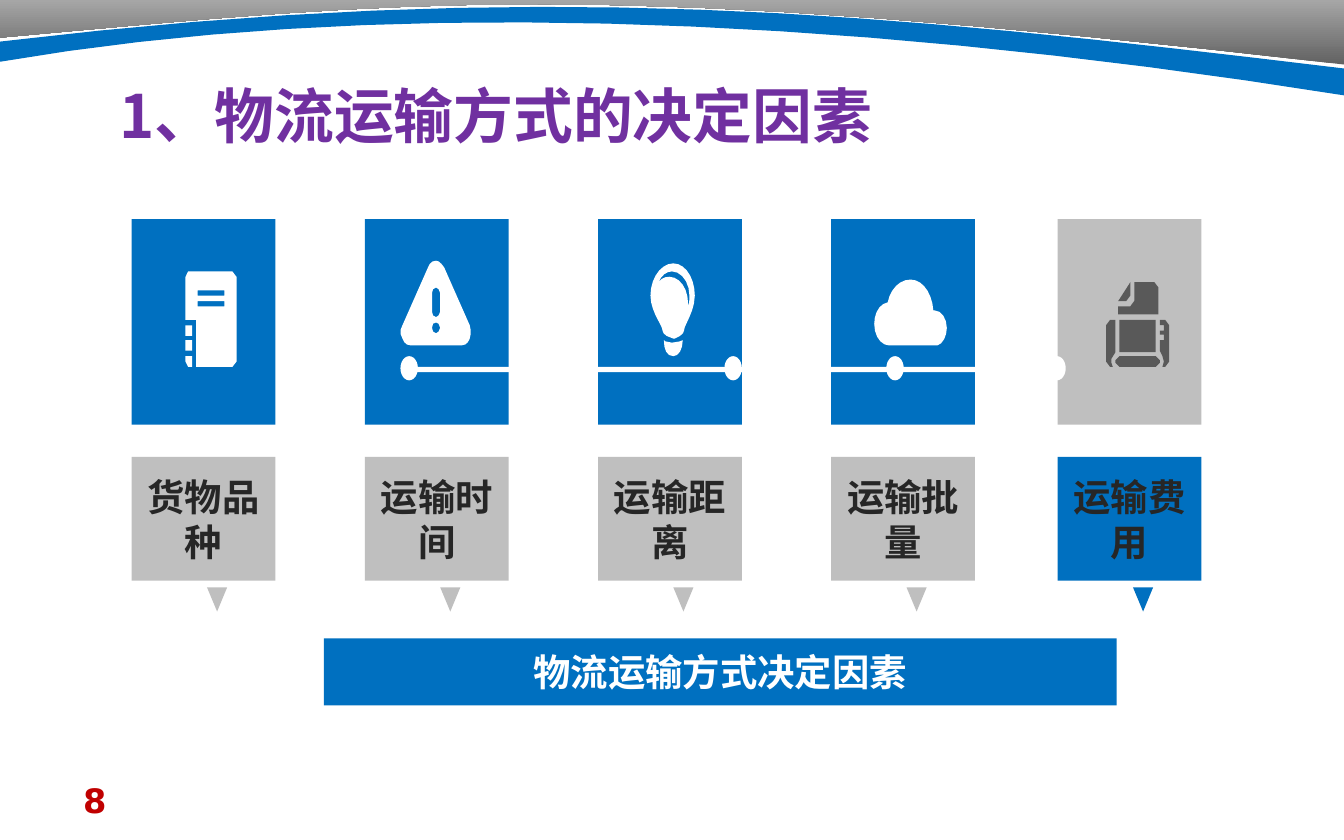
import dataclasses
import math
import lxml.etree
import pptx
import pptx.dml.color
import pptx.enum.shapes
import pptx.enum.text
import pptx.oxml.ns
import pptx.util


@dataclasses.dataclass(frozen=True)
class Theme:
    blue: str = "0070C0"
    gray: str = "BFBFBF"
    dark: str = "595959"
    ink: str = "262626"
    white: str = "FFFFFF"
    plum: str = "7030A0"
    red: str = "C00000"
    low: str = "626262"
    high: str = "A6A6A6"
    han: str = "Noto Sans CJK SC"
    sans: str = "DejaVu Sans"
    head: int = 32
    body: int = 20
    foot: int = 18


T = Theme()
Kind = pptx.enum.shapes.MSO_SHAPE
Align = pptx.enum.text.PP_ALIGN
Inch = pptx.util.Inches

TITLE = "1、物流运输方式的决定因素"
BANNER = "物流运输方式决定因素"
PAGE = "8"

SKY = "M 1000 48 C 443 -17 308 0 0 28 L 0 0 L 1000 0"
BAND = "M 0 31 C 403 -17 652 9 1000 51 L 1000 71 C 605 8 267 0 0 46"

BOOK = [
    "M 42 39 L 75 39 L 78 43 L 78 106 L 75 110 L 48 110 L 48 75 L 40 75 L 40 43 "
    "M 49 65 L 69 65 L 69 61 L 49 61 M 49 57 L 69 57 L 69 53 L 49 53",
    "M 45 110 L 42 110 L 40 106 L 40 102 L 45 102",
    (40, 79, 5, 8),
    (40, 90, 5, 8),
]
ALERT = [
    "M 47 36 C 48 33 50 31 53 31 C 55 31 57 33 59 36 L 78 79 C 79 82 79 86 78 89 "
    "C 77 92 75 94 72 94 L 34 94 C 31 94 29 92 28 89 C 26 86 26 82 28 79 "
    "M 53 85 C 54 85 56 83 56 81 C 56 78 54 77 53 77 C 51 77 50 78 50 81 C 50 83 51 85 53 85 "
    "M 50 69 C 50 71 51 73 53 73 C 54 73 56 71 56 69 L 56 55 C 56 53 54 51 53 51 "
    "C 51 51 50 53 50 55",
]
BULB = [
    "M 50 91 L 55 92 L 61 91 L 63 90 C 63 97 60 102 56 102 C 51 102 49 97 49 90",
    "M 56 33 C 65 33 72 44 72 57 C 72 69 64 79 64 83 C 64 84 63 86 61 87 "
    "L 57 89 L 56 89 L 51 87 C 49 86 48 84 48 83 "
    "C 48 79 39 69 39 57 C 39 44 47 33 56 33 "
    "M 53 43 C 61 43 67 52 67 63 L 67 65 C 68 63 68 60 68 57 C 68 47 62 39 55 39 "
    "C 51 39 47 42 45 47 C 47 44 50 43 53 43",
]
CLOUD = [
    "M 42 62 C 44 52 51 45 59 45 C 68 45 75 55 76 68 L 77 68 C 82 68 86 74 86 81 "
    "C 86 87 83 93 79 94 L 43 94 C 37 94 32 87 32 78 C 32 70 36 63 42 62",
]
PRINT = [
    "M 39 75 L 43 75 L 43 99 L 40 104 L 40 107 L 41 110 L 39 110 L 36 106 L 36 79",
    "M 43 105 L 46 102 L 73 102 L 76 105 L 76 107 L 73 110 L 46 110 L 43 107",
    "M 76 98 L 76 90 L 79 90 L 79 86 L 76 86 L 76 83 L 79 83 L 79 79 L 76 79 L 76 75 "
    "L 80 75 L 83 79 L 83 106 L 80 110 L 78 110 L 79 106 L 78 102",
    "M 51 61 L 45 61 L 54 47 L 54 57",
    "M 45 65 L 54 65 L 57 61 L 57 47 L 72 47 L 75 51 L 75 71 L 45 71",
    (46, 75, 27, 24),
]
CARDS = [
    ("货物品种", BOOK, T.blue, T.gray, T.white),
    ("运输时间", ALERT, T.blue, T.gray, T.white),
    ("运输距离", BULB, T.blue, T.gray, T.white),
    ("运输批量", CLOUD, T.blue, T.gray, T.white),
    ("运输费用", PRINT, T.gray, T.blue, T.dark),
]
LEFT, STEP, WIDE, TUCK = 0.98, 1.735, 1.07, 0.05
TOP, TALL = 1.63, 1.53
NAME_TOP, NAME_TALL = 3.4, 0.92
TIP_TOP, TIP_LEFT = 4.37, 0.56
DOT_LEFT, DOT_STEP, DOT_TOP = 2.98, 1.205, 2.65
UNIT = 9144


def tint(name):
    return pptx.dml.color.RGBColor.from_string(name)


def paint(shape, hue):
    shape.shadow.inherit = False
    shape.fill.solid()
    shape.fill.fore_color.rgb = tint(hue)
    shape.line.fill.background()
    return shape


def block(slide, kind, box, hue):
    return paint(slide.shapes.add_shape(kind, *map(Inch, box)), hue)


def write(shape, text, size, hue, face=T.han, align=Align.CENTER):
    frame = shape.text_frame
    frame.text = text
    frame.word_wrap = True
    frame.auto_size = pptx.enum.text.MSO_AUTO_SIZE.NONE
    frame.vertical_anchor = pptx.enum.text.MSO_ANCHOR.MIDDLE
    line = frame.paragraphs[0]
    line.alignment = align
    font = line.runs[0].font
    font.name, font.size, font.bold = face, pptx.util.Pt(size), True
    font.color.rgb = tint(hue)
    mark = pptx.oxml.ns.qn("a:ea")
    lxml.etree.SubElement(line.runs[0]._r.get_or_add_rPr(), mark).set("typeface", face)


def curve(a, b, c, d):
    count = min(16, 1 + round(math.dist(a, d) / 5))
    for n in range(1, count + 1):
        t = n / count
        u = 1 - t
        yield tuple(u**3 * p + 3 * u * u * t * q + 3 * u * t * t * r + t**3 * s
                    for p, q, r, s in zip(a, b, c, d))


def trace(code):
    loops, parts = [], iter(code.split())

    def point():
        return float(next(parts)), float(next(parts))

    for step in parts:
        if step == "M":
            loops.append([point()])
        elif step == "L":
            loops[-1].append(point())
        else:
            loops[-1].extend(curve(loops[-1][-1], point(), point(), point()))
    return [[(x * UNIT, y * UNIT) for x, y in loop] for loop in loops]


def outline(slide, code, hue, x=0, y=0):
    first, *rest = trace(code)
    pen = slide.shapes.build_freeform(*first[0])
    pen.add_line_segments(first[1:], close=True)
    for loop in rest:
        pen.move_to(*loop[0])
        pen.add_line_segments(loop[1:], close=True)
    return paint(pen.convert_to_shape(Inch(x), Inch(y)), hue)


def header(slide):
    outline(slide, SKY, T.white, y=0.03)
    sky = outline(slide, SKY, T.low)
    sky.fill.gradient()
    sky.fill.gradient_angle = 90
    for stop, hue in zip(sky.fill.gradient_stops, (T.low, T.high)):
        stop.color.rgb = tint(hue)
    outline(slide, BAND, T.blue)
    title = slide.shapes.title
    title.left, title.top, title.width, title.height = map(Inch, (0.69, 0.53, 6.59, 0.64))
    write(title, TITLE, T.head, T.plum, align=Align.LEFT)
    title.text_frame.margin_left = Inch(0.2)


def card(slide, x, text, icon, tile, base, hue):
    block(slide, Kind.RECTANGLE, (x, TOP, WIDE, TALL), tile)
    label = block(slide, Kind.RECTANGLE, (x, NAME_TOP, WIDE, NAME_TALL), base)
    write(label, text, T.body, T.ink)
    for part in icon:
        if isinstance(part, str):
            outline(slide, part, hue, x, TOP)
        else:
            a, b, w, h = (v / 100 for v in part)
            block(slide, Kind.RECTANGLE, (x + a, TOP + b, w, h), hue)
    tip = block(slide, Kind.ISOSCELES_TRIANGLE, (x + TIP_LEFT, TIP_TOP, 0.15, 0.18), base)
    tip.rotation = 180


def main():
    deck = pptx.Presentation()
    deck.slide_width, deck.slide_height = Inch(10), Inch(6.25)
    slide = deck.slides.add_slide(deck.slide_layouts[5])
    header(slide)
    for n, item in enumerate(CARDS):
        shift = TUCK if n == len(CARDS) - 1 else 0
        card(slide, LEFT + n * STEP - shift, *item)
    for n in range(len(CARDS)):
        block(slide, Kind.OVAL, (DOT_LEFT + n * DOT_STEP, DOT_TOP, 0.13, 0.18), T.white)
    block(slide, Kind.RECTANGLE, (3, 2.73, 4.83, 0.04), T.white)
    banner = block(slide, Kind.RECTANGLE, (2.41, 4.75, 5.9, 0.5), T.blue)
    write(banner, BANNER, T.body, T.white)
    foot = slide.shapes.add_textbox(*map(Inch, (0.52, 5.79, 2.33, 0.33)))
    write(foot, PAGE, T.foot, T.red, T.sans, Align.LEFT)
    deck.save("out.pptx")


if __name__ == "__main__":
    main()
